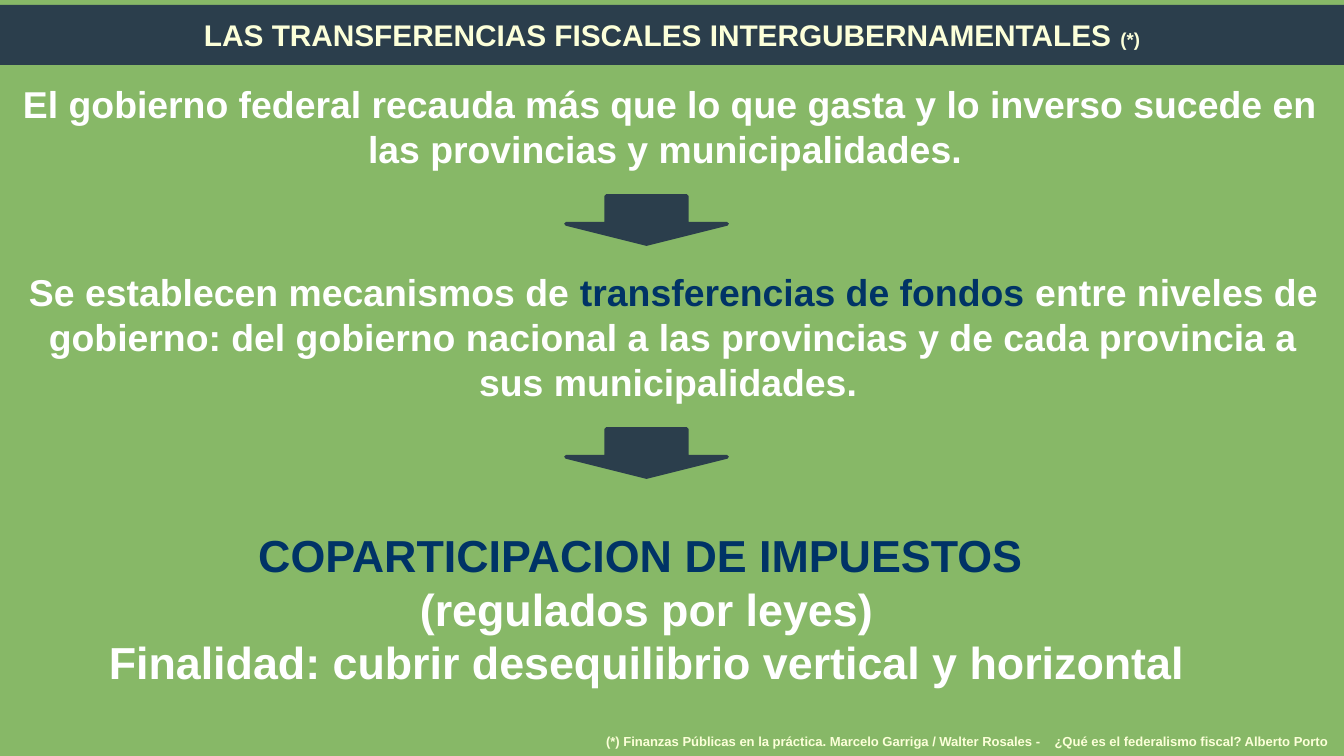
from dataclasses import dataclass

from pptx import Presentation
from pptx.dml.color import RGBColor
from pptx.enum.shapes import MSO_SHAPE
from pptx.enum.text import MSO_ANCHOR, MSO_AUTO_SIZE, PP_ALIGN
from pptx.util import Emu, Pt

PX_PER_INCH = 134.4


@dataclass(frozen=True)
class Theme:
    font: str = "Arial"
    background: str = "87B867"
    slate: str = "2B3E4C"
    navy: str = "003366"
    white: str = "FFFFFF"
    cream: str = "FCFFD9"
    heading: int = 16
    reference: int = 10
    body: int = 20
    conclusion: int = 24
    credit: int = 7


THEME = Theme()


def px(length):
    return Emu(round(length * 914400 / PX_PER_INCH))


def paint(fill, color):
    fill.solid()
    fill.fore_color.rgb = RGBColor.from_string(color)


def place(shape, left, top, width, height):
    shape.left, shape.top = px(left), px(top)
    shape.width, shape.height = px(width), px(height)


def write(paragraph, text, size=THEME.body, color=THEME.white, tracking=0):
    run = paragraph.add_run()
    run.text = text
    run.font.name = THEME.font
    run.font.size = Pt(size)
    run.font.bold = True
    run.font.color.rgb = RGBColor.from_string(color)
    if tracking:
        run.font._element.set("spc", str(tracking))


def fill_paragraphs(frame, paragraphs, align):
    for index, pieces in enumerate(paragraphs):
        paragraph = frame.add_paragraph() if index else frame.paragraphs[0]
        paragraph.alignment = align
        for text, style in pieces:
            write(paragraph, text, **style)


def add_heading(slide):
    heading = slide.shapes.title
    place(heading, 0, 5, 1344, 60)
    paint(heading.fill, THEME.slate)
    frame = heading.text_frame
    frame.auto_size = MSO_AUTO_SIZE.NONE
    frame.word_wrap = True
    frame.vertical_anchor = MSO_ANCHOR.MIDDLE
    frame.margin_left = frame.margin_right = px(13)
    frame.margin_top = frame.margin_bottom = px(13)
    fill_paragraphs(frame, [[
        ("LAS TRANSFERENCIAS FISCALES INTERGUBERNAMENTALES ",
         dict(size=THEME.heading, color=THEME.cream)),
        ("(*)", dict(size=THEME.reference, color=THEME.cream)),
    ]], PP_ALIGN.CENTER)


def add_statement(slide, bounds, paragraphs, align=PP_ALIGN.CENTER):
    statement = slide.shapes.add_textbox(*map(px, bounds))
    frame = statement.text_frame
    frame.word_wrap = True
    frame.auto_size = MSO_AUTO_SIZE.SHAPE_TO_FIT_TEXT
    fill_paragraphs(frame, paragraphs, align)


def add_step_arrow(slide, top):
    arrow = slide.shapes.add_shape(
        MSO_SHAPE.DOWN_ARROW, px(566), px(top), px(161), px(48))
    arrow.adjustments[0] = 0.5
    arrow.adjustments[1] = 0.42
    arrow.shadow.inherit = False
    paint(arrow.fill, THEME.slate)
    paint(arrow.line.fill, THEME.slate)
    arrow.line.width = Pt(2)


def main():
    deck = Presentation()
    deck.slide_width, deck.slide_height = px(1344), px(756)
    slide = deck.slides.add_slide(deck.slide_layouts[5])
    paint(slide.background.fill, THEME.background)

    add_heading(slide)

    credit = dict(size=THEME.credit, color=THEME.cream)
    add_statement(slide, (-3, 727, 1344, 30), [[
        ("(*) Finanzas Públicas en la práctica. Marcelo Garriga / Walter Rosales -", credit),
        (" ", dict(credit, tracking=580)),
        ("¿Qué es el federalismo fiscal? Alberto Porto", credit),
    ]], align=PP_ALIGN.RIGHT)

    add_statement(slide, (0, 75, 1341, 103), [[
        ("El gobierno federal recauda más que lo que gasta y lo inverso "
         "sucede en las provincias y municipalidades. ", {}),
    ]])
    add_statement(slide, (3, 263, 1341, 149), [[
        ("Se establecen mecanismos de ", {}),
        ("transferencias de fondos ", dict(color=THEME.navy)),
        ("entre niveles de gobierno: del gobierno nacional a las provincias "
         "y de cada provincia a sus municipalidades. ", {}),
    ]])
    conclusion = dict(size=THEME.conclusion)
    add_statement(slide, (-24, 521, 1341, 176), [
        [("COPARTICIPACION DE IMPUESTOS ", dict(conclusion, color=THEME.navy))],
        [("(regulados por leyes)", conclusion)],
        [("Finalidad: cubrir desequilibrio vertical y horizontal", conclusion)],
    ])

    for top in (196, 429):
        add_step_arrow(slide, top)

    deck.save("out.pptx")


if __name__ == "__main__":
    main()
